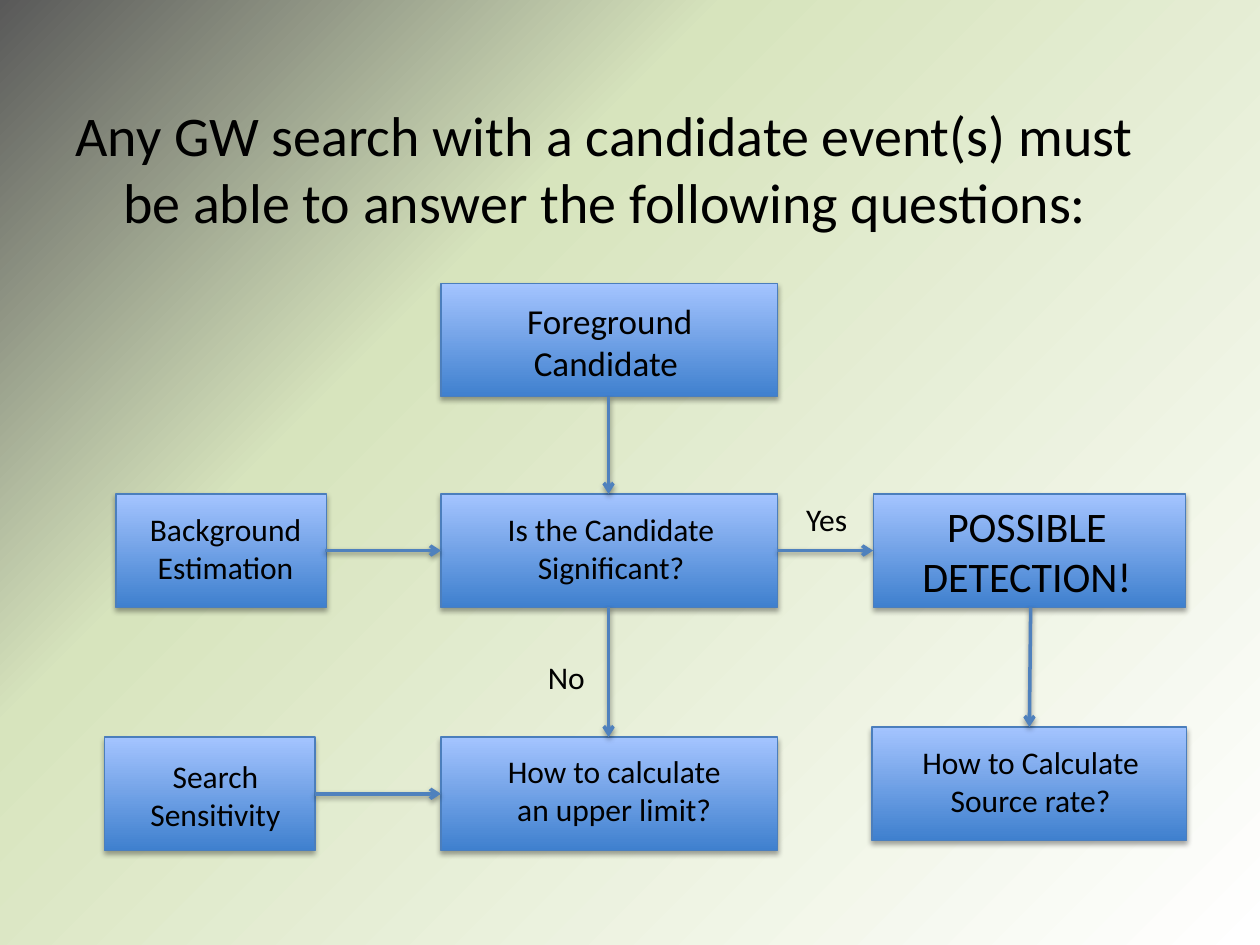
"""Build a flow chart slide of the questions behind a candidate event."""
from lxml.etree import SubElement
from pptx import Presentation
from pptx.dml.color import RGBColor as Color
from pptx.enum.shapes import MSO_CONNECTOR as Connector, MSO_SHAPE as Shape
from pptx.enum.text import MSO_AUTO_SIZE as AutoSize, PP_ALIGN as Align
from pptx.oxml.ns import qn
from pptx.util import Inches, Pt

THEME = {
    "font": "Calibri", "text": "000000", "shadow": "000000",
    "backdrop": [(0, "FFFFFF"), (67, "D7E4BD"), (100, "595959")],
    "box": ["3F80CE", "A4C4FF"], "outline": "4B7EBC", "arrow": "4F81BD",
    "title": 32, "start": 20, "label": 18, "result": 24,
}


def add_shadow(item, distance, opacity):
    effects = SubElement(item._element.spPr, qn("a:effectLst"))
    shadow = SubElement(effects, qn("a:outerShdw"), blurRad=str(Pt(3.1)),
                        dist=str(Pt(distance)), dir="5400000", rotWithShape="0")
    color = SubElement(shadow, qn("a:srgbClr"), val=THEME["shadow"])
    SubElement(color, qn("a:alpha"), val=str(opacity * 1000))


def add_text(page, place, lines, size, align, wrap=False):
    frame = page.shapes.add_textbox(*map(Inches, place)).text_frame
    frame.word_wrap = wrap
    frame.auto_size = AutoSize.NONE if wrap else AutoSize.SHAPE_TO_FIT_TEXT
    for index, line in enumerate(lines):
        para = frame.add_paragraph() if index else frame.paragraphs[0]
        para.alignment = align
        span = para.add_run()
        span.text = line
        for name, value in {"name": THEME["font"], "size": Pt(THEME[size])}.items():
            setattr(span.font, name, value)
        span.font.color.rgb = Color.from_string(THEME["text"])
    return frame


deck = Presentation()
deck.slide_width, deck.slide_height = Inches(10), Inches(7.5)
page = deck.slides.add_slide(deck.slide_layouts[6])

page.background.fill.gradient()
gradient = page.element.find(".//" + qn("a:gradFill"))
for child in list(gradient):
    gradient.remove(child)
stops = SubElement(gradient, qn("a:gsLst"))
for position, tint in THEME["backdrop"]:
    stop = SubElement(stops, qn("a:gs"), pos=str(position * 1000))
    SubElement(stop, qn("a:srgbClr"), val=tint)
route = SubElement(gradient, qn("a:path"), path="circle")
SubElement(route, qn("a:fillToRect"), l="100000", t="100000")

title = add_text(page, (0.5, 0.75, 9, 1.25), [
    "Any GW search with a candidate event(s) must be able to answer the following questions:",
], "title", Align.LEFT, wrap=True)
title.paragraphs[0].space_before = Pt(6.4)
indents = title.paragraphs[0]._p.get_or_add_pPr()
for name, value in {"marL": 0.38, "indent": -0.38}.items():
    indents.set(name, str(Inches(value)))

BOX_HEIGHT = 0.9
steps = [
    ((3.5, 2.25, 2.67), (4.08, 2.33, 1.52, 0.77), ["Foreground", "Candidate "], "start"),
    ((0.92, 3.92, 1.67), (1.08, 4, 1.42, 0.71), ["Background", "Estimation"], "label"),
    ((3.5, 3.92, 2.67), (3.92, 4, 1.86, 0.71), ["Is the Candidate", "Significant?"], "label"),
    ((6.93, 3.92, 2.48), (7.21, 3.92, 1.88, 0.91), ["POSSIBLE", "DETECTION!"], "result"),
    ((0.83, 5.85, 1.67), (1.09, 5.96, 1.24, 0.71), ["Search", "Sensitivity"], "label"),
    ((3.5, 5.85, 2.67), (3.92, 5.92, 1.91, 0.71), ["How to calculate", "an upper limit?"], "label"),
    ((6.92, 5.77, 2.5), (7.21, 5.85, 1.94, 0.71), ["How to Calculate", "Source rate?"], "label"),
]
for place, label_place, lines, size in steps:
    box = page.shapes.add_shape(Shape.RECTANGLE, *map(Inches, (*place, BOX_HEIGHT)))
    box.fill.gradient()
    box.fill.gradient_angle = 90
    for stop, tint in zip(box.fill.gradient_stops, THEME["box"]):
        stop.color.rgb = Color.from_string(tint)
    box.line.color.rgb = Color.from_string(THEME["outline"])
    box.line.width = Pt(0.75)
    add_shadow(box, 1.8, 35)
    add_text(page, label_place, lines, size, Align.CENTER)

arrows = [
    (4.83, 3.15, 4.83, 3.92), (4.83, 4.82, 4.83, 5.85), (8.18, 4.82, 8.17, 5.77),
    (2.58, 4.37, 3.5, 4.37), (6.17, 4.37, 6.93, 4.37), (2.5, 6.3, 3.5, 6.3),
]
for ends in arrows:
    arrow = page.shapes.add_connector(Connector.STRAIGHT, *map(Inches, ends))
    arrow.line.color.rgb = Color.from_string(THEME["arrow"])
    arrow.line.width = Pt(2)
    SubElement(arrow.line._get_or_add_ln(), qn("a:tailEnd"), type="arrow")
    add_shadow(arrow, 1.6, 38)

for answer, place in {"No": (4.25, 5.17, 0.5, 0.4), "Yes": (6.3, 3.92, 0.53, 0.4)}.items():
    add_text(page, place, [answer], "label", Align.LEFT)

deck.save("out.pptx")
